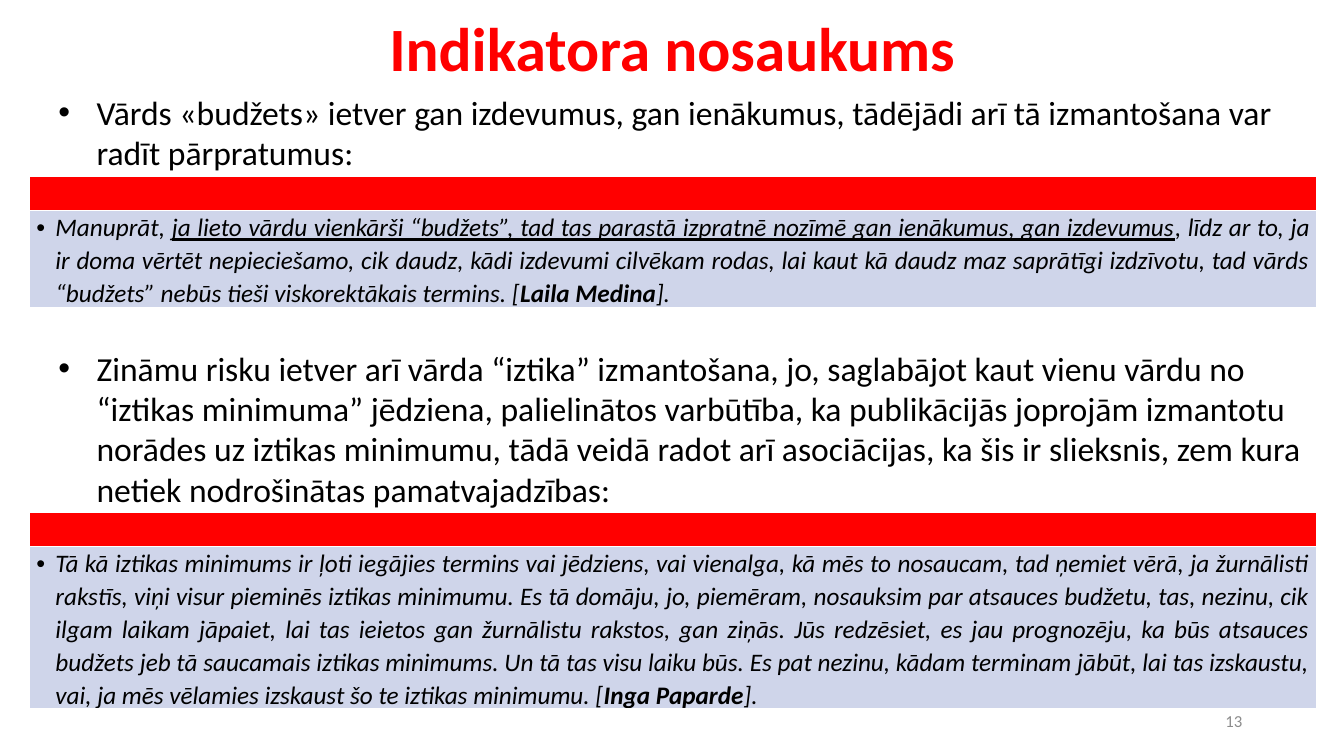
from pptx import Presentation
from pptx.dml.color import RGBColor
from pptx.enum.text import MSO_ANCHOR, PP_ALIGN
from pptx.util import Inches, Pt
from lxml import etree

LEFT, CENTER, RIGHT, JUSTIFY = PP_ALIGN.LEFT, PP_ALIGN.CENTER, PP_ALIGN.RIGHT, PP_ALIGN.JUSTIFY
TOP, MIDDLE = MSO_ANCHOR.TOP, MSO_ANCHOR.MIDDLE
A = "http://schemas.openxmlformats.org/drawingml/2006/main"

# Content: each section is a point and the quote that supports it
TITLE = "Indikatora nosaukums"
PAGE = "13"
SECTIONS = [
    dict(
        point="Vārds «budžets» ietver gan izdevumus, gan ienākumus, tādējādi arī tā "
              "izmantošana var radīt pārpratumus:",
        quote=[
            ("Manuprāt, ", {}),
            ("ja lieto vārdu vienkārši “budžets”, tad tas parastā izpratnē nozīmē gan "
             "ienākumus, gan izdevumus", {"underline": True}),
            (", līdz ar to, ja ir doma vērtēt nepieciešamo, cik daudz, kādi izdevumi "
             "cilvēkam rodas, lai kaut kā daudz maz saprātīgi izdzīvotu, tad vārds "
             "“budžets” nebūs tieši viskorektākais termins. [", {}),
            ("Laila Medina", {"bold": True}),
            ("].", {}),
        ],
        point_top=0.86, point_height=1.31, quote_top=1.75, quote_height=0.96),
    dict(
        point="Zināmu risku ietver arī vārda “iztika” izmantošana, jo, saglabājot kaut "
              "vienu vārdu no “iztikas minimuma” jēdziena, palielinātos varbūtība, ka "
              "publikācijās joprojām izmantotu norādes uz iztikas minimumu, tādā veidā "
              "radot arī asociācijas, ka šis ir slieksnis, zem kura netiek nodrošinātas "
              "pamatvajadzības:",
        quote=[
            ("Tā kā iztikas minimums ir ļoti iegājies termins vai jēdziens, vai vienalga, "
             "kā mēs to nosaucam, tad ņemiet vērā, ja žurnālisti rakstīs, viņi visur "
             "pieminēs iztikas minimumu. Es tā domāju, jo, piemēram, nosauksim par "
             "atsauces budžetu, tas, nezinu, cik ilgam laikam jāpaiet, lai tas ieietos "
             "gan žurnālistu rakstos, gan ziņās. Jūs redzēsiet, es jau prognozēju, ka "
             "būs atsauces budžets jeb tā saucamais iztikas minimums. Un tā tas visu "
             "laiku būs. Es pat nezinu, kādam terminam jābūt, lai tas izskaustu, vai, ja "
             "mēs vēlamies izskaust šo te iztikas minimumu. [", {}),
            ("Inga Paparde", {"bold": True}),
            ("].", {}),
        ],
        point_top=3.4, point_height=1.72, quote_top=5.08, quote_height=1.61),
]

# Theme and grid, in inches
THEME = dict(font="Calibri", red="FF0000", ink="000000", band="CFD5EA", grey="8C8C8C",
             title=44, point=24, quote=18, page=12)
WIDTH, HEIGHT = 13.33, 7.5
POINT_LEFT, POINT_WIDTH = 0.48, 12.57
QUOTE_LEFT, QUOTE_WIDTH, BAR_HEIGHT = 0.29, 12.77, 0.34


def write(tf, runs, size, color="ink", align=LEFT, indent=0, spacing=None, after=None,
          **style):
    """Write one paragraph of (text, font attributes) runs; an indent adds a bullet."""
    p = tf.paragraphs[0]
    p.alignment = align
    if spacing:
        p.line_spacing = spacing
    if after:
        p.space_after = Pt(after)
    if indent:
        pPr = p._p.get_or_add_pPr()
        pPr.set("marL", str(Inches(indent)))
        pPr.set("indent", str(-Inches(indent)))
        etree.SubElement(pPr, f"{{{A}}}buFont", typeface="Arial")
        etree.SubElement(pPr, f"{{{A}}}buChar", char="•")
    for text, extra in runs:
        r = p.add_run()
        r.text = text
        r.font.name = THEME["font"]
        r.font.size = Pt(THEME[size])
        r.font.color.rgb = RGBColor.from_string(THEME[color])
        for name, value in {**style, **extra}.items():
            setattr(r.font, name, value)


def add_text(slide, box, text, size, anchor=TOP, **fmt):
    tf = slide.shapes.add_textbox(*map(Inches, box)).text_frame
    tf.word_wrap = True
    tf.vertical_anchor = anchor
    write(tf, [(text, {})], size, **fmt)


def add_quote(slide, top, height, runs):
    """A two-row table: a plain red bar above the quote."""
    box = (QUOTE_LEFT, top, QUOTE_WIDTH, BAR_HEIGHT + height)
    table = slide.shapes.add_table(2, 1, *map(Inches, box)).table
    table.first_row = table.horz_banding = False
    for i, (row_height, fill) in enumerate([(BAR_HEIGHT, "red"), (height, "band")]):
        table.rows[i].height = Inches(row_height)
        cell = table.cell(i, 0)
        cell.margin_left = cell.margin_right = Inches(0.07)
        cell.margin_top = cell.margin_bottom = 0
        cell.fill.solid()
        cell.fill.fore_color.rgb = RGBColor.from_string(THEME[fill])
    write(table.cell(1, 0).text_frame, runs, "quote", align=JUSTIFY, indent=0.19,
          spacing=1.07, after=8, italic=True)


def main():
    prs = Presentation()
    prs.slide_width, prs.slide_height = Inches(WIDTH), Inches(HEIGHT)
    slide = prs.slides.add_slide(prs.slide_layouts[6])

    # Title and page number
    add_text(slide, (0.92, 0, 11.5, 1.02), TITLE, "title", MIDDLE, color="red",
             align=CENTER, spacing=0.9, bold=True)
    add_text(slide, (9.42, 6.95, 3, 0.4), PAGE, "page", MIDDLE, color="grey", align=RIGHT)

    # Points with their quotes
    for s in SECTIONS:
        add_text(slide, (POINT_LEFT, s["point_top"], POINT_WIDTH, s["point_height"]),
                 s["point"], "point", indent=0.38)
        add_quote(slide, s["quote_top"], s["quote_height"], s["quote"])

    prs.save("out.pptx")


if __name__ == "__main__":
    main()
